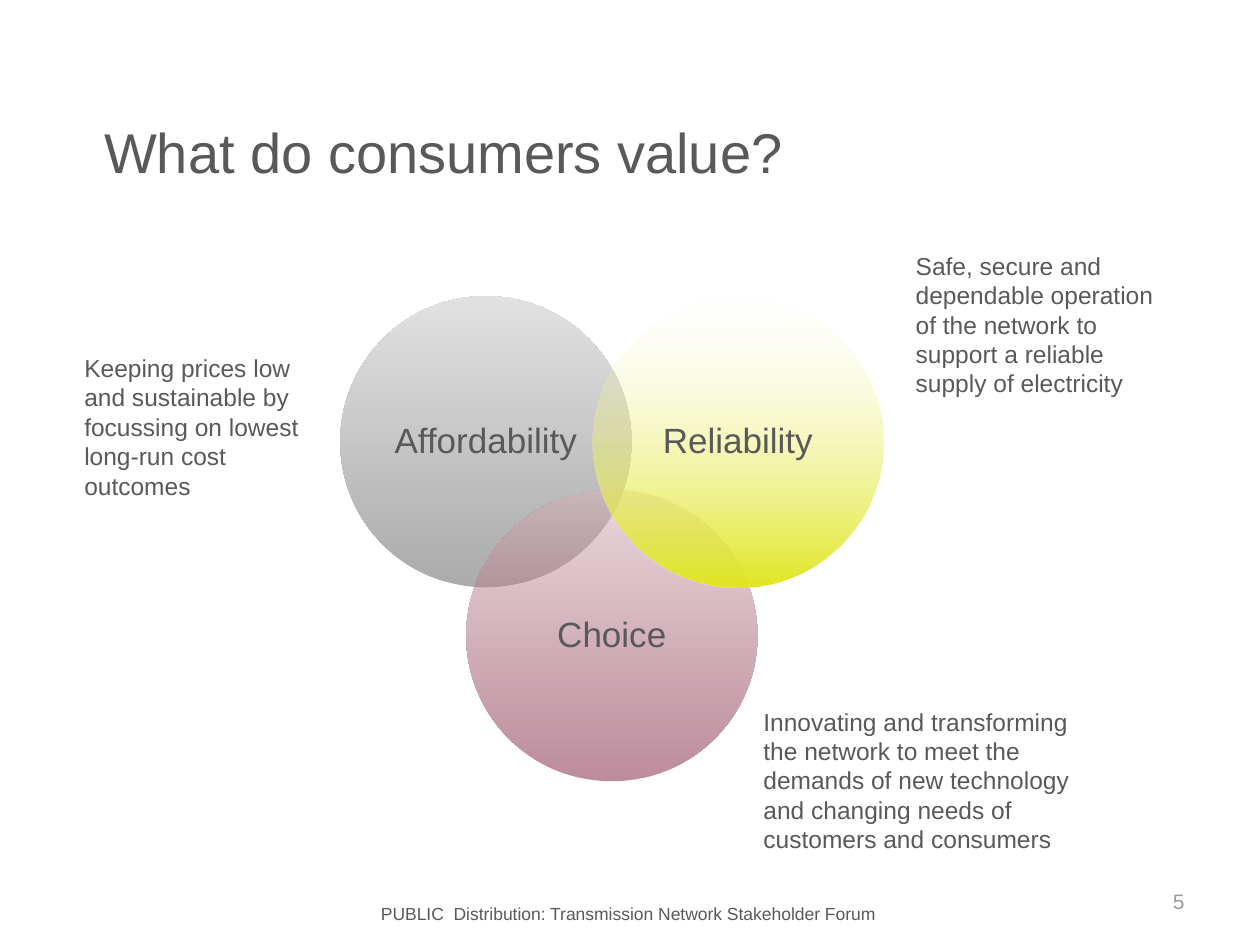
from lxml.etree import SubElement
from pptx import Presentation
from pptx.dml.color import RGBColor
from pptx.enum.shapes import MSO_SHAPE as Shape
from pptx.enum.text import MSO_ANCHOR as Anchor, PP_ALIGN as Align
from pptx.oxml.ns import qn
from pptx.util import Cm, Pt


def rgb(code):
    return RGBColor.from_string(code)


def write(frame, text, size=14, color="595959", font="Arial",
          align=Align.LEFT, anchor=Anchor.TOP, line_spacing=None):
    frame.word_wrap = True
    frame.vertical_anchor = anchor
    paragraph = frame.paragraphs[0]
    paragraph.alignment = align
    paragraph.line_spacing = line_spacing
    run = paragraph.add_run()
    run.text = text
    run.font.size = Pt(size)
    run.font.name = font
    run.font.color.rgb = rgb(color)


class ValueSlide:
    """Holds the current slide and the style of its elements."""
    diameter = 5.87
    label_inset = 0.2

    def __init__(self, deck):
        self.slide = deck.slides.add_slide(deck.slide_layouts[6])

    def text(self, left, top, width, height, wording, **style):
        box = self.slide.shapes.add_textbox(Cm(left), Cm(top), Cm(width), Cm(height))
        write(box.text_frame, wording, **style)

    def circle(self, left, top, label, stops):
        """Add a labelled circle; stops are (hex, opacity %) from bottom to top."""
        circle = self.slide.shapes.add_shape(
            Shape.OVAL, Cm(left), Cm(top), Cm(self.diameter), Cm(self.diameter))
        circle.shadow.inherit = False
        circle.line.fill.background()
        circle.fill.gradient()
        circle.fill.gradient_angle = 90
        for stop, (color, _) in zip(circle.fill.gradient_stops, stops):
            stop.color.rgb = rgb(color)
        colors = circle.fill._xPr.iter(qn("a:srgbClr"))
        for element, (_, opacity) in zip(colors, stops):
            SubElement(element, qn("a:alpha"), val=str(opacity * 1000))

        frame = circle.text_frame
        frame.margin_left = frame.margin_right = Cm(self.label_inset)
        frame.margin_top = frame.margin_bottom = Cm(self.label_inset)
        write(frame, label, size=20, align=Align.CENTER,
              anchor=Anchor.MIDDLE, line_spacing=0.9)


def main():
    deck = Presentation()
    deck.slide_width, deck.slide_height = Cm(25.4), Cm(19.05)
    page = ValueSlide(deck)

    page.text(5.66, 18.08, 14, 0.69,
              "PUBLIC  Distribution: Transmission Network Stakeholder Forum",
              size=10, align=Align.CENTER)
    page.text(1.85, 1.45, 22.76, 3.18, "What do consumers value?",
              size=32, anchor=Anchor.MIDDLE)

    left, top, step, drop = 6.86, 5.97, 5.08, 3.91
    page.circle(left, top, "Affordability", [("595959", 50), ("C4C4C4", 50)])
    page.circle(left + step / 2, top + drop, "Choice",
                [("7A1B39", 50), ("D6B0B7", 50)])
    page.circle(left + step, top, "Reliability", [("E0E721", 100), ("F9FAD3", 0)])

    page.text(18.21, 17.65, 5.92, 1.02, "5", size=12, color="9B9B9B",
              align=Align.RIGHT, anchor=Anchor.MIDDLE)

    explanations = [
        (18.21, 4.93, 5.74, "Safe, secure and dependable operation of the network "
                            "to support a reliable supply of electricity"),
        (1.45, 6.99, 4.85, "Keeping prices low and sustainable by focussing on "
                           "lowest long-run cost outcomes"),
        (15.14, 14.12, 7.37, "Innovating and transforming the network to meet the "
                             "demands of new technology and changing needs of "
                             "customers and consumers"),
    ]
    for x, y, width, wording in explanations:
        page.text(x, y, width, 3.25, wording)

    deck.save("out.pptx")


if __name__ == "__main__":
    main()
